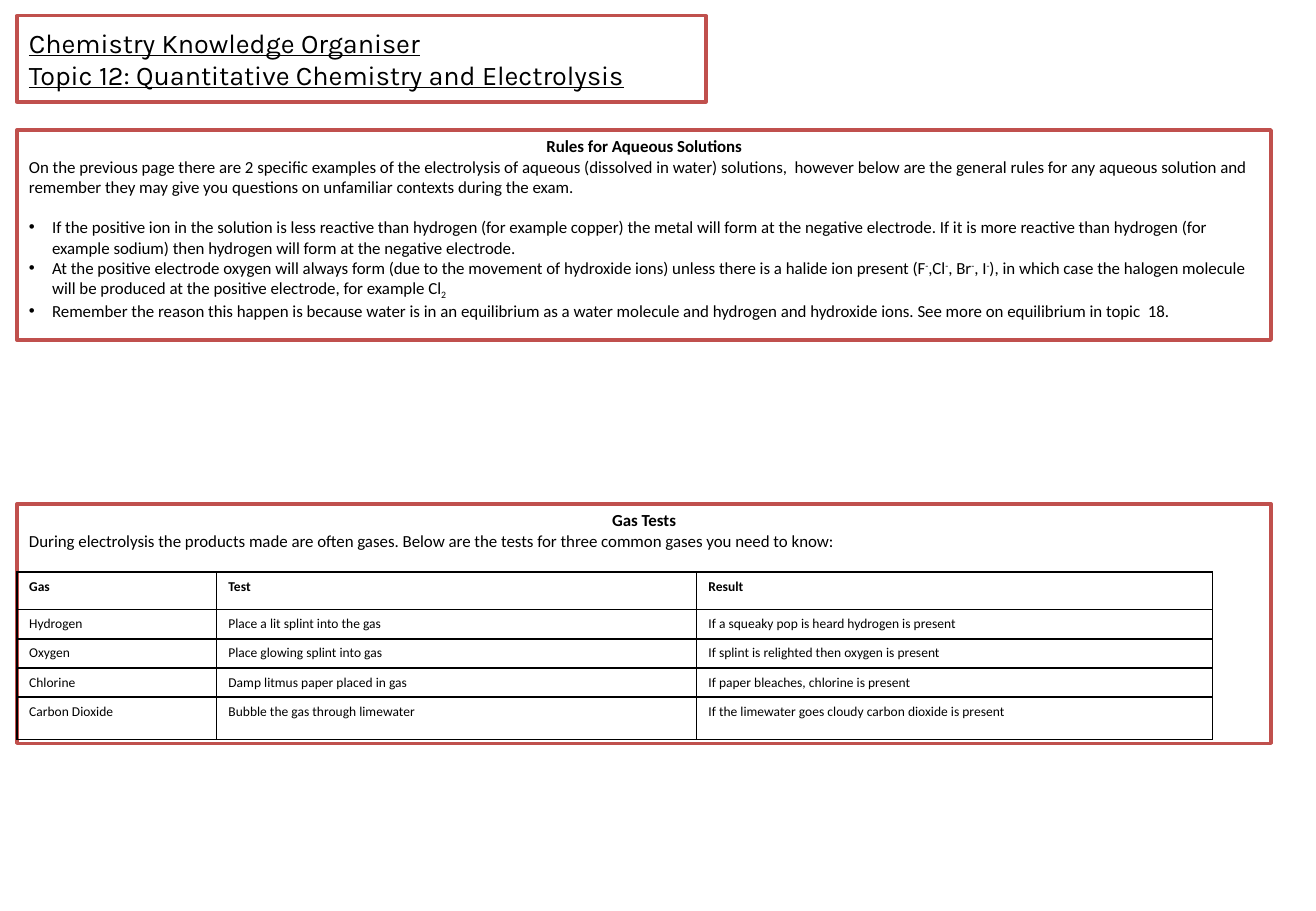
from pptx import Presentation
from pptx.dml.color import RGBColor
from pptx.enum.shapes import MSO_SHAPE as Preset
from pptx.enum.text import MSO_ANCHOR as Anchor, PP_ALIGN as Align
from pptx.oxml.xmlchemy import OxmlElement
from pptx.util import Pt

PX = 9144
BLACK = RGBColor(0x00, 0x00, 0x00)
WHITE = RGBColor(0xFF, 0xFF, 0xFF)
RED = RGBColor(0xC0, 0x50, 0x4D)
SUPERSCRIPT, SUBSCRIPT = 30000, -25000

TITLE_BOX = (14, 13, 567, 71)
RULES_BOX = (14, 107, 1032, 173)
GASES_BOX = (14, 415, 1032, 197)

TITLE = ["Chemistry Knowledge Organiser", "Topic 12: Quantitative Chemistry and Electrolysis"]
RULES_INTRO = (
    "On the previous page there are 2 specific examples of the electrolysis of aqueous "
    "(dissolved in water) solutions,  however below are the general rules for any aqueous "
    "solution and remember they may give you questions on unfamiliar contexts during the exam."
)
MINUS = ("-", SUPERSCRIPT)
RULES = [
    "If the positive ion in the solution is less reactive than hydrogen (for example copper) "
    "the metal will form at the negative electrode. If it is more reactive than hydrogen "
    "(for example sodium) then hydrogen will form at the negative electrode.",
    [
        ("At the positive electrode oxygen will always form (due to the movement of hydroxide "
         "ions) unless there is a halide ion present (F", 0),
        MINUS, (",Cl", 0), MINUS, (", Br", 0), MINUS, (", I", 0), MINUS,
        ("), in which case the halogen molecule will be produced at the positive electrode, "
         "for example Cl", 0),
        ("2", SUBSCRIPT),
    ],
    "Remember the reason this happen is because water is in an equilibrium as a water molecule "
    "and hydrogen and hydroxide ions. See more on equilibrium in topic  18.",
]
GASES_INTRO = (
    "During electrolysis the products made are often gases. "
    "Below are the tests for three common gases you need to know:"
)
GAS_TESTS = [
    ("Gas", "Test", "Result"),
    ("Hydrogen", "Place a lit splint into the gas", "If a squeaky pop is heard hydrogen is present"),
    ("Oxygen", "Place glowing splint into gas", "If splint is relighted then oxygen is present"),
    ("Chlorine", "Damp litmus paper placed in gas", "If paper bleaches, chlorine is present"),
    ("Carbon Dioxide", "Bubble the gas through limewater",
     "If the limewater goes cloudy carbon dioxide is present"),
]
COLUMN_WIDTHS = (164, 395, 425)
ROW_HEIGHTS = (31, 24, 24, 24, 35)


def add_text(frame, text, font="Calibri", size=10, bold=False, underline=False,
             align=Align.LEFT, before=0, bullet=False):
    paragraph = frame.paragraphs[0]
    if paragraph.runs:
        paragraph = frame.add_paragraph()
    paragraph.alignment = align
    paragraph.space_before = Pt(before)
    if bullet:
        properties = paragraph._p.get_or_add_pPr()
        properties.set("marL", str(19 * PX))
        properties.set("indent", str(-19 * PX))
        for tag, name, value in (("a:buFont", "typeface", "Arial"), ("a:buChar", "char", "•")):
            mark = OxmlElement(tag)
            mark.set(name, value)
            properties.append(mark)
    for words, baseline in [(text, 0)] if isinstance(text, str) else text:
        run = paragraph.add_run()
        run.text = words
        run.font.name = font
        run.font.size = Pt(size)
        run.font.bold = bold
        run.font.underline = underline
        run.font.color.rgb = BLACK
        if baseline:
            run.font._element.set("baseline", str(baseline))


def add_panel(slide, box, anchor=Anchor.TOP):
    shape = slide.shapes.add_shape(Preset.RECTANGLE, *(value * PX for value in box))
    shape.shadow.inherit = False
    shape.fill.solid()
    shape.fill.fore_color.rgb = WHITE
    shape.line.color.rgb = RED
    shape.line.width = Pt(2)
    frame = shape.text_frame
    frame.word_wrap = True
    frame.vertical_anchor = anchor
    return frame


def add_borders(cell):
    properties = cell._tc.get_or_add_tcPr()
    for index, side in enumerate(("L", "R", "T", "B")):
        line = OxmlElement(f"a:ln{side}")
        line.set("w", str(Pt(1)))
        fill = OxmlElement("a:solidFill")
        color = OxmlElement("a:srgbClr")
        color.set("val", str(BLACK))
        fill.append(color)
        line.append(fill)
        properties.insert(index, line)


def add_gas_table(slide, left, top):
    table = slide.shapes.add_table(
        len(ROW_HEIGHTS), len(COLUMN_WIDTHS), left * PX, top * PX,
        sum(COLUMN_WIDTHS) * PX, sum(ROW_HEIGHTS) * PX).table
    table.first_row = False
    table.horz_banding = False
    for column, width in zip(table.columns, COLUMN_WIDTHS):
        column.width = width * PX
    for row_index, (row, height, texts) in enumerate(zip(table.rows, ROW_HEIGHTS, GAS_TESTS)):
        row.height = height * PX
        for cell, text in zip(row.cells, texts):
            cell.fill.background()
            add_borders(cell)
            add_text(cell.text_frame, text, size=8, bold=row_index == 0)


def add_title(slide, box):
    frame = add_panel(slide, box, Anchor.MIDDLE)
    for line in TITLE:
        add_text(frame, line, font="Karla", size=16, underline=True)


def add_rules(slide, box):
    frame = add_panel(slide, box)
    add_text(frame, "Rules for Aqueous Solutions", bold=True, align=Align.CENTER)
    add_text(frame, RULES_INTRO)
    for index, rule in enumerate(RULES):
        add_text(frame, rule, bullet=True, before=0 if index else 12)


def add_gas_tests(slide, box):
    frame = add_panel(slide, box)
    add_text(frame, "Gas Tests", bold=True, align=Align.CENTER)
    add_text(frame, GASES_INTRO)
    left, top, _, _ = box
    add_gas_table(slide, left, top + 56)


def main():
    presentation = Presentation()
    presentation.slide_width = 1083 * PX
    presentation.slide_height = 750 * PX
    slide = presentation.slides.add_slide(presentation.slide_layouts[6])
    add_title(slide, TITLE_BOX)
    add_gas_tests(slide, GASES_BOX)
    add_rules(slide, RULES_BOX)
    presentation.save("out.pptx")


if __name__ == "__main__":
    main()
